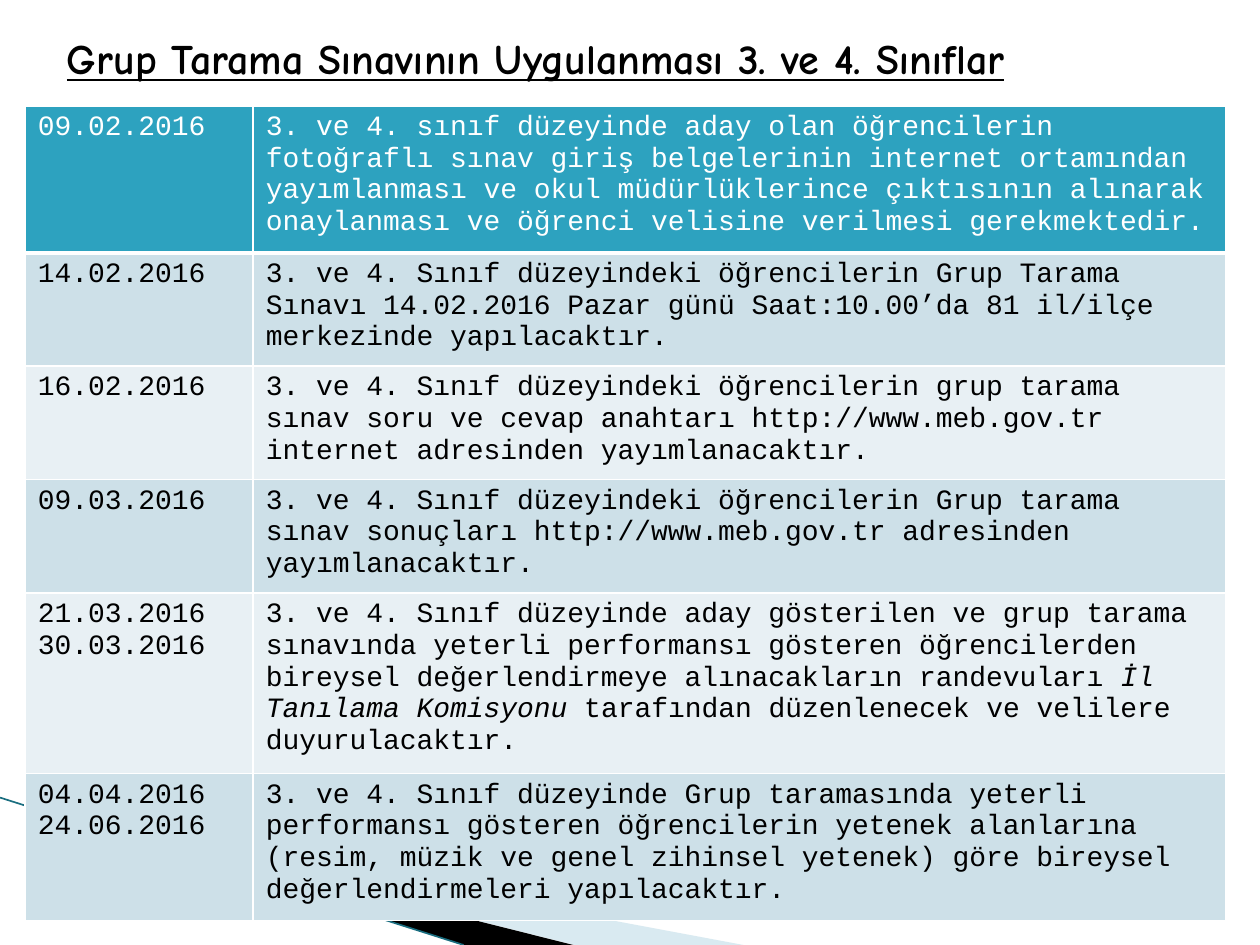
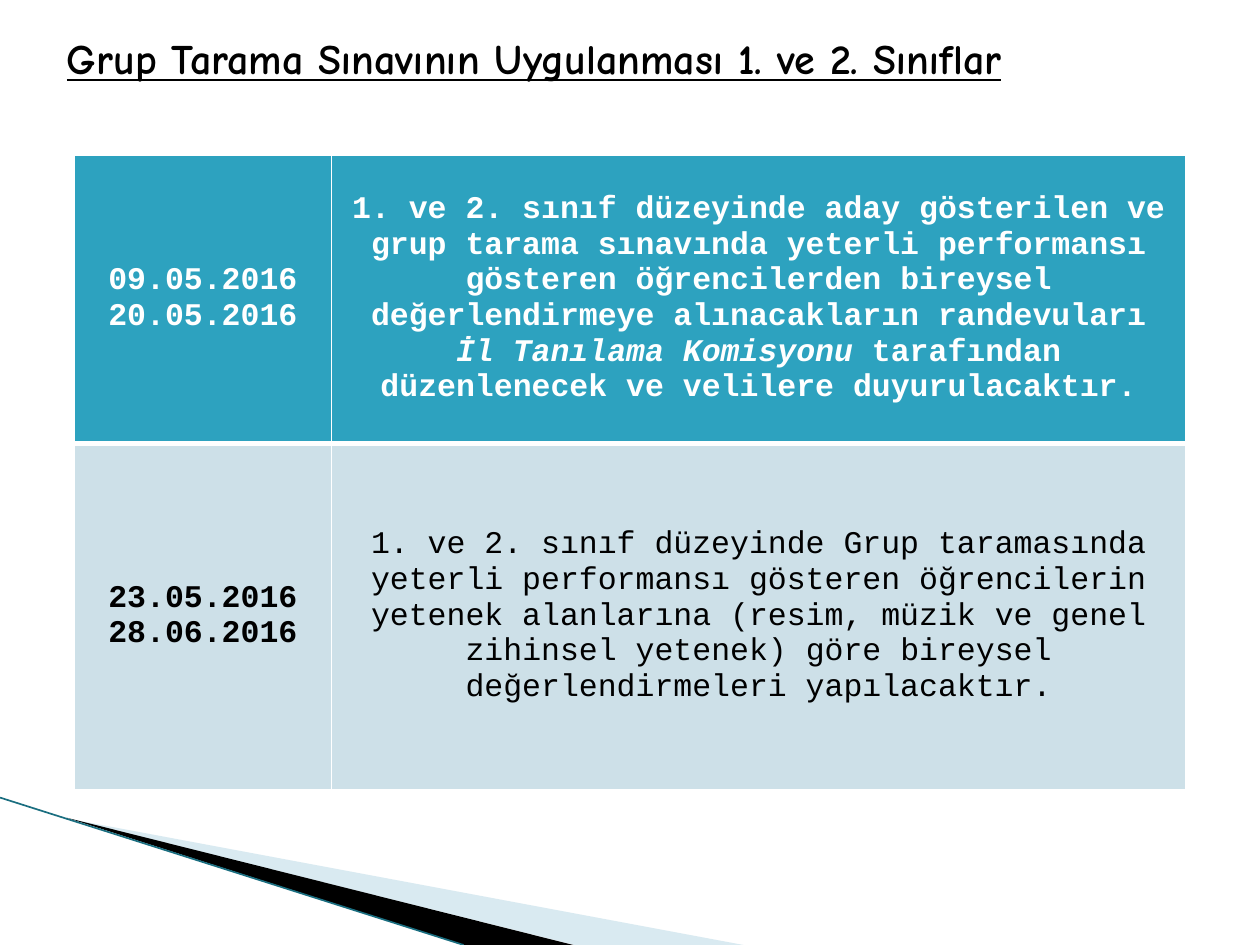
"""Build two slides with the exam calendar for the group screening test."""
from lxml.etree import SubElement
from pptx import Presentation
from pptx.dml.color import RGBColor
from pptx.enum.text import MSO_ANCHOR as Anchor, MSO_AUTO_SIZE as AutoSize, PP_ALIGN as Align
from pptx.enum.shapes import MSO_CONNECTOR as Connector
from pptx.oxml.ns import qn
from pptx.util import Inches, Pt

COLORS = {
    "white": "FFFFFF",
    "black": "000000",
    "header": "2DA2BF",
    "band_dark": "CDE0E8",
    "band_light": "E8F0F4",
    "wedge": "A0CBDC",
    "edge": "1A6E80",
}
TITLE_FONT = "Comic Neue"
TABLE_FONT = "Courier New"

WEDGES = [
    ("wedge", 40, [(0.55, 6.5), (5.9, 7.5), (4.56, 7.5)]),
    ("black", 100, [(0.53, 6.49), (4.55, 7.5), (3.68, 7.5)]),
]

CALENDARS = [
    {
        "title": "Grup Tarama Sınavının Uygulanması 3. ve 4. Sınıflar",
        "left": 0.2, "top": 0.84,
        "columns": [1.81, 7.72],
        "heights": [1.16, 0.9, 0.9, 0.9, 1.43, 1.16],
        "size": 16, "bold": False, "align": Align.LEFT, "anchor": Anchor.TOP,
        "rows": [
            ("09.02.2016", "3. ve 4. sınıf düzeyinde aday olan öğrencilerin fotoğraflı sınav giriş "
             "belgelerinin internet ortamından yayımlanması ve okul müdürlüklerince çıktısının "
             "alınarak onaylanması ve öğrenci velisine verilmesi gerekmektedir."),
            ("14.02.2016", "3. ve 4. Sınıf düzeyindeki öğrencilerin Grup Tarama Sınavı 14.02.2016 "
             "Pazar günü Saat:10.00’da 81 il/ilçe merkezinde yapılacaktır."),
            ("16.02.2016", "3. ve 4. Sınıf düzeyindeki öğrencilerin grup tarama sınav soru ve cevap "
             "anahtarı http://www.meb.gov.tr internet adresinden yayımlanacaktır."),
            ("09.03.2016", "3. ve 4. Sınıf düzeyindeki öğrencilerin Grup tarama sınav sonuçları "
             "http://www.meb.gov.tr adresinden yayımlanacaktır."),
            ("21.03.2016\n30.03.2016", "3. ve 4. Sınıf düzeyinde aday gösterilen ve grup tarama "
             "sınavında yeterli performansı gösteren öğrencilerden bireysel değerlendirmeye "
             "alınacakların randevuları *İl Tanılama Komisyonu* tarafından düzenlenecek ve "
             "velilere duyurulacaktır."),
            ("04.04.2016\n24.06.2016", "3. ve 4. Sınıf düzeyinde Grup taramasında yeterli "
             "performansı gösteren öğrencilerin yetenek alanlarına (resim, müzik ve genel "
             "zihinsel yetenek) göre bireysel değerlendirmeleri yapılacaktır."),
        ],
    },
    {
        "title": "Grup Tarama Sınavının Uygulanması 1. ve 2. Sınıflar",
        "left": 0.59, "top": 1.23,
        "columns": [2.04, 6.78],
        "heights": [2.29, 2.75],
        "size": 18, "bold": True, "align": Align.CENTER, "anchor": Anchor.MIDDLE,
        "rows": [
            ("09.05.2016\n20.05.2016", "1. ve 2. sınıf düzeyinde aday gösterilen ve grup tarama "
             "sınavında yeterli performansı gösteren öğrencilerden bireysel değerlendirmeye "
             "alınacakların randevuları *İl Tanılama Komisyonu* tarafından düzenlenecek ve "
             "velilere duyurulacaktır."),
            ("23.05.2016\n28.06.2016", "1. ve 2. sınıf düzeyinde Grup taramasında yeterli "
             "performansı gösteren öğrencilerin yetenek alanlarına (resim, müzik ve genel "
             "zihinsel yetenek) göre bireysel değerlendirmeleri yapılacaktır."),
        ],
    },
]


def rgb(name):
    return RGBColor.from_string(COLORS[name])


def set_borders(cell, top, bottom):
    properties = cell._tc.get_or_add_tcPr()
    widths = [("a:lnL", 1), ("a:lnR", 1), ("a:lnT", top), ("a:lnB", bottom)]
    for position, (tag, width) in enumerate(widths):
        border = SubElement(properties, qn(tag), w=str(Pt(width)))
        fill = SubElement(border, qn("a:solidFill"))
        SubElement(fill, qn("a:srgbClr"), val=COLORS["white"])
        properties.insert(position, border)


presentation = Presentation()
presentation.slide_width = Inches(10)
presentation.slide_height = Inches(7.5)
title_only = presentation.slide_layouts[5]

for calendar in CALENDARS:
    slide = presentation.slides.add_slide(title_only)

    for color, opacity, points in WEDGES:
        corners = [(Inches(x), Inches(y)) for x, y in points]
        builder = slide.shapes.build_freeform(*corners[0])
        builder.add_line_segments(corners[1:])
        wedge = builder.convert_to_shape()
        wedge.shadow.inherit = False
        wedge.line.fill.background()
        wedge.fill.solid()
        wedge.fill.fore_color.rgb = rgb(color)
        if opacity < 100:
            wedge_color = wedge.fill._xPr.find(".//" + qn("a:srgbClr"))
            SubElement(wedge_color, qn("a:alpha"), val=str(opacity * 1000))

    edge = slide.shapes.add_connector(
        Connector.STRAIGHT, Inches(0), Inches(6.33), Inches(3.68), Inches(7.5))
    edge.line.color.rgb = rgb("edge")
    edge.line.width = Pt(0.95)
    SubElement(edge._element.spPr, qn("a:effectLst"))

    title = slide.shapes.title
    title.left, title.top = Inches(0.43), Inches(0.21)
    title.width, title.height = Inches(9.29), Inches(0.5)
    title.text_frame.text = calendar["title"]
    title.text_frame.word_wrap = True
    title.text_frame.auto_size = AutoSize.SHAPE_TO_FIT_TEXT
    title.text_frame.vertical_anchor = Anchor.TOP
    heading = title.text_frame.paragraphs[0]
    heading.alignment = Align.LEFT
    heading.font.name = TITLE_FONT
    heading.font.size = Pt(24)
    heading.font.bold = True
    heading.font.underline = True
    heading.font.color.rgb = rgb("black")

    table = slide.shapes.add_table(
        len(calendar["rows"]), len(calendar["columns"]),
        Inches(calendar["left"]), Inches(calendar["top"]),
        Inches(sum(calendar["columns"])), Inches(sum(calendar["heights"]))).table
    for column, width in zip(table.columns, calendar["columns"]):
        column.width = Inches(width)
    for row, height in zip(table.rows, calendar["heights"]):
        row.height = Inches(height)

    for row_index, texts in enumerate(calendar["rows"]):
        is_header = row_index == 0
        band = "header" if is_header else "band_dark" if row_index % 2 else "band_light"
        for column_index, text in enumerate(texts):
            cell = table.cell(row_index, column_index)
            cell.fill.solid()
            cell.fill.fore_color.rgb = rgb(band)
            set_borders(cell, 3 if row_index == 1 else 1, 3 if is_header else 1)
            cell.vertical_anchor = calendar["anchor"]

            plain, *marked = text.split("*")
            cell.text_frame.text = plain
            for part_index, part in enumerate(marked):
                run = cell.text_frame.paragraphs[0].add_run()
                run.text = part
                run.font.italic = part_index % 2 == 0

            for paragraph in cell.text_frame.paragraphs:
                paragraph.alignment = calendar["align"]
                for run in paragraph.runs:
                    run.font.name = TABLE_FONT
                    run.font.size = Pt(calendar["size"])
                    run.font.bold = calendar["bold"] and (is_header or column_index == 0)
                    run.font.color.rgb = rgb("white" if is_header else "black")

presentation.save("out.pptx")
